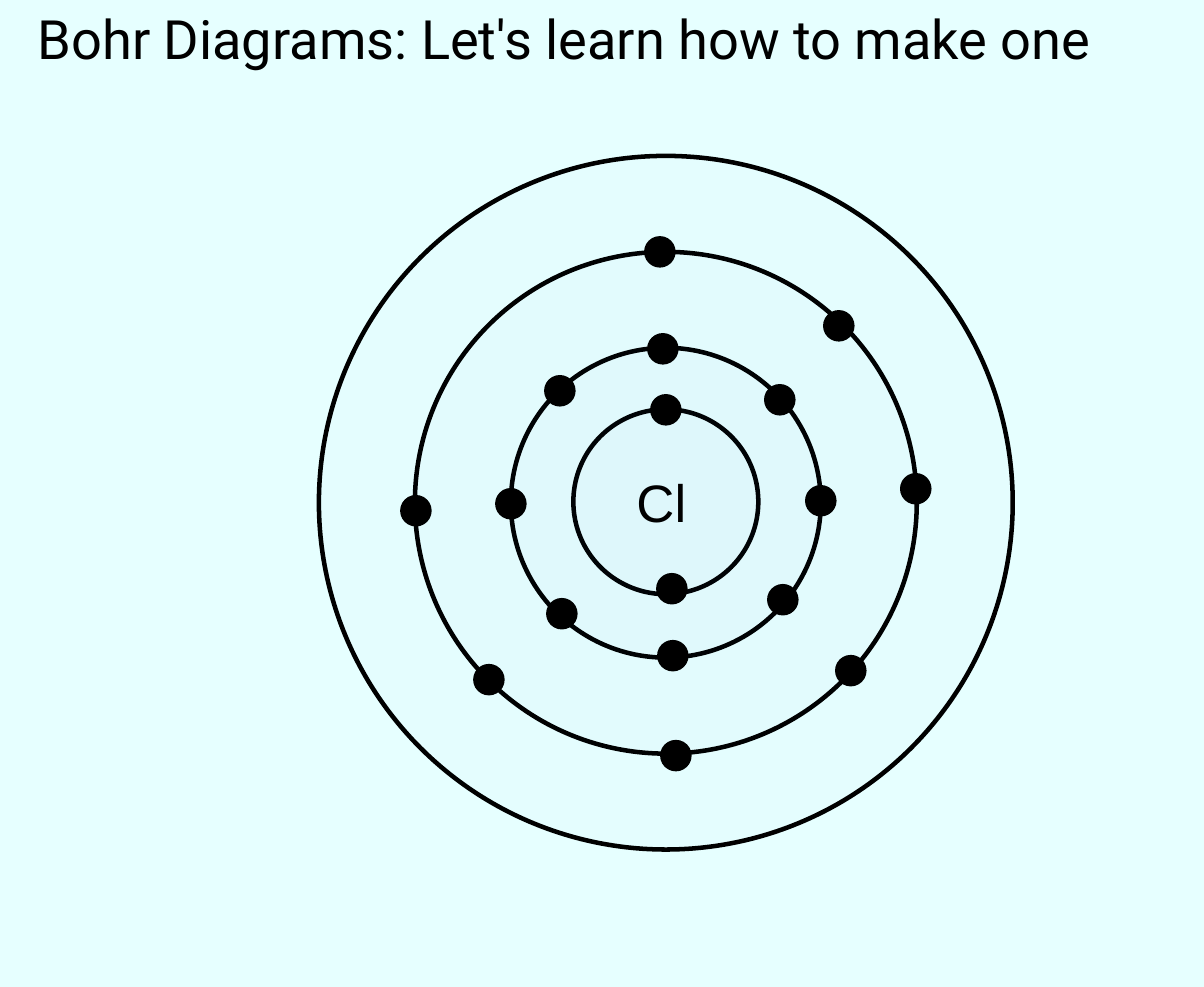
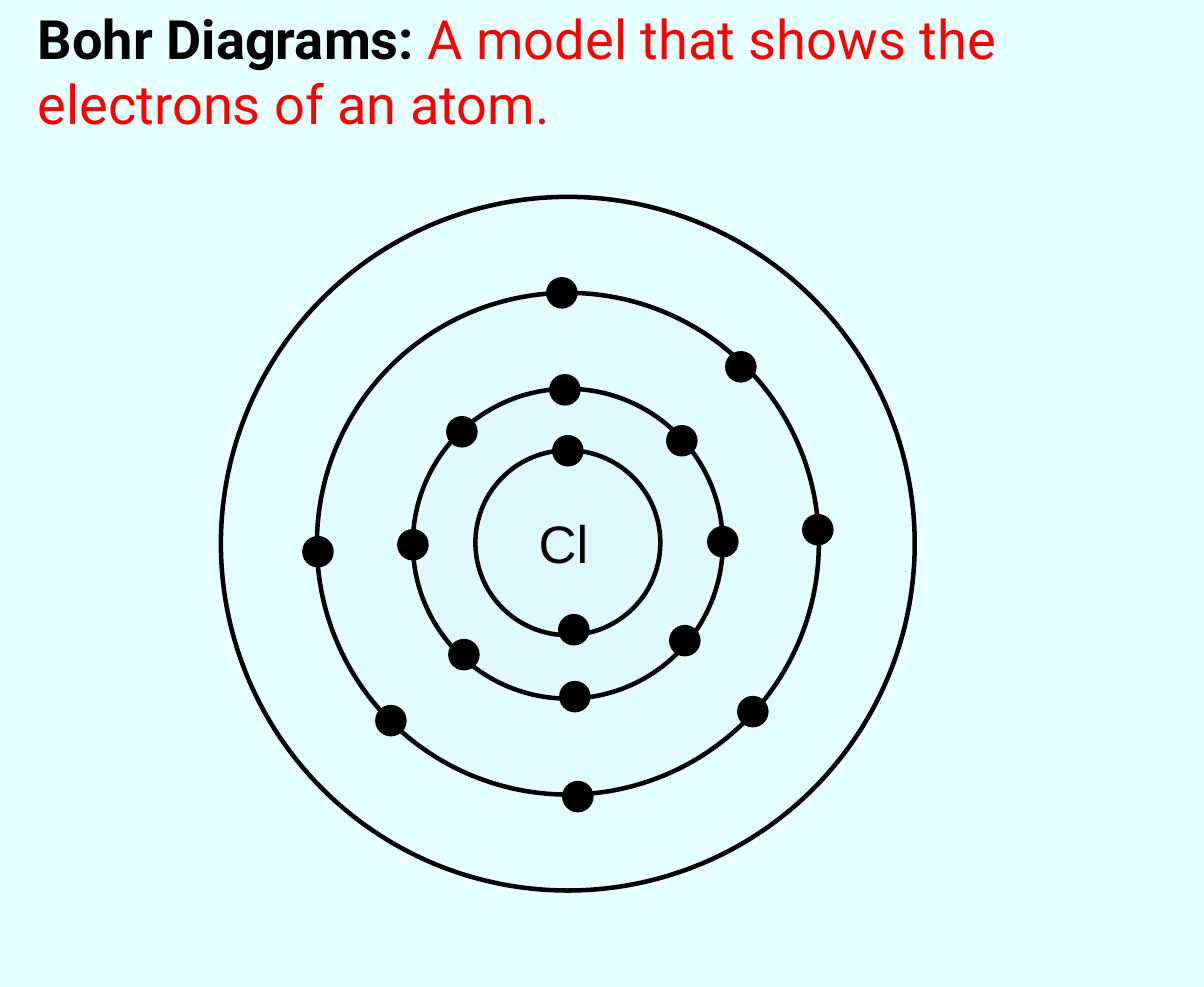
from lxml import etree
from pptx import Presentation
from pptx import util as u
from pptx.dml.color import RGBColor
from pptx.enum import shapes, text
from pptx.oxml import ns

SCALE = 914400 / 108.4  # EMU per pixel
PAGE_WIDTH, PAGE_HEIGHT = u.Inches(11.11), u.Inches(9.11)
BLACK, RED, PALE, TINT = "000000", "FF0000", "E6FFFF", "4F81BD"
TITLE_FONT, SYMBOL_FONT = "Roboto", "Arial"

# Shells: diameter and vertical shift from the atom's centre
SHELLS = [(185, -1), (310, 0), (502, 0), (694, 0)]
ELECTRON_SIZE = 27

# Hand-placed electrons of each shell, as offsets from the atom's centre
ELECTRONS = [
    [(0, -93), (6, 86)],
    [(-3, -154), (114, -103), (155, -2), (117, 97),
     (7, 153), (-104, 111), (-155, 1), (-106, -112)],
    [(-6, -251), (173, -177), (250, -14), (185, 168),
     (10, 253), (-177, 177), (-250, 8)],
]


def px(length):
    return u.Emu(round(length * SCALE))


def colour(value):
    return RGBColor.from_string(value)


def add_text(page, left, top, width, height, spans, font, size):
    """Add one paragraph; each span is (text, colour, bold)."""
    box = page.shapes.add_textbox(px(left), px(top), px(width), px(height))
    frame = box.text_frame
    frame.word_wrap = True
    frame.auto_size = text.MSO_AUTO_SIZE.SHAPE_TO_FIT_TEXT
    para = frame.paragraphs[0]
    para.font.name, para.font.size = font, u.Pt(size)
    for words, shade, bold in spans:
        span = para.add_run()
        span.text = words
        span.font.bold = bold
        span.font.color.rgb = colour(shade)


def add_circle(page, x, y, diameter, fill, opacity=100):
    """Add a black-edged circle centred on x, y."""
    circle = page.shapes.add_shape(
        shapes.MSO_SHAPE.OVAL, px(x - diameter / 2), px(y - diameter / 2),
        px(diameter), px(diameter))
    circle.shadow.inherit = False
    circle.fill.solid()
    circle.fill.fore_color.rgb = colour(fill)
    circle.line.color.rgb = colour(BLACK)
    circle.line.width = u.Pt(3)
    if opacity < 100:
        shade = circle.element.spPr.find(".//" + ns.qn("a:srgbClr"))
        etree.SubElement(shade, ns.qn("a:alpha"), val=str(opacity * 1000))


def add_atom(page, x, y):
    # Shells, each with a faint tint that builds up toward the nucleus
    for diameter, shift in SHELLS:
        add_circle(page, x, y + shift, diameter, TINT, opacity=1)
    # Element symbol
    add_text(page, x - 40, y - 38, 82, 75, [("Cl", BLACK, False)],
             SYMBOL_FONT, 35)
    # Electrons
    for shell in ELECTRONS:
        for across, down in shell:
            add_circle(page, x + across, y + down, ELECTRON_SIZE, BLACK)


def add_page(deck, title, title_height, atom_centre):
    page = deck.slides.add_slide(deck.slide_layouts[6])
    add_text(page, 27, 0, 1151, title_height, title, TITLE_FONT, 36)
    add_atom(page, *atom_centre)


def main():
    deck = Presentation()
    deck.slide_width, deck.slide_height = PAGE_WIDTH, PAGE_HEIGHT
    backdrop = deck.slide_master.background.fill
    backdrop.solid()
    backdrop.fore_color.rgb = colour(PALE)

    # How to draw one
    add_page(deck, [("Bohr Diagrams: Let's learn how to make one",
                     BLACK, False)], 77, (666, 503))
    # Definition
    add_page(deck, [("Bohr Diagrams: ", BLACK, True),
                    ("A model that shows the electrons of an atom.",
                     RED, False)], 142, (568, 544))
    deck.save("out.pptx")


main()
